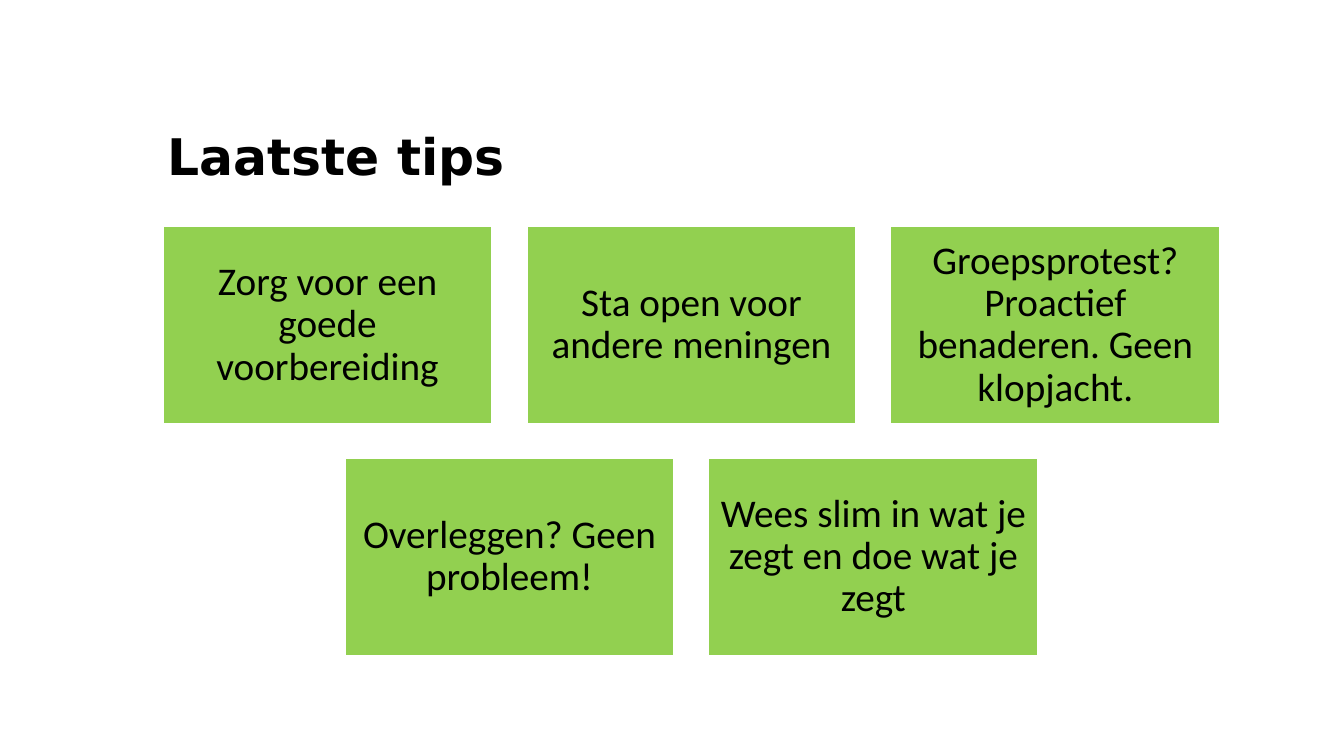
from pptx import Presentation
from pptx.dml.color import RGBColor
from pptx.enum.shapes import MSO_SHAPE as Shape
from pptx.enum.text import MSO_ANCHOR as Anchor, MSO_AUTO_SIZE as AutoSize, PP_ALIGN as Align
from pptx.util import Cm, Pt

GREEN, WHITE, BLACK = "92D050", "FFFFFF", "000000"

# Card grid, in centimetres
LEFT, TOP, WIDTH = 4.09, 5.69, 26.67
CARD_WIDTH, CARD_HEIGHT, GAP = 8.33, 5.0, 0.84

TIP_ROWS = [
    [
        "Zorg voor een goede voorbereiding",
        "Sta open voor andere meningen",
        "Groepsprotest? Proactief benaderen. Geen klopjacht.",
    ],
    [
        "Overleggen? Geen probleem!",
        "Wees slim in wat je zegt en doe wat je zegt",
    ],
]


def color(value):
    return RGBColor.from_string(value)


def write_text(box, text, font="Calibri", size=28, bold=False,
               align=Align.CENTER, inset=0.3):
    frame = box.text_frame
    frame.word_wrap = True
    frame.auto_size = AutoSize.NONE
    frame.vertical_anchor = Anchor.MIDDLE
    frame.margin_left = frame.margin_right = Cm(inset)
    frame.margin_top = frame.margin_bottom = Cm(inset)
    para = frame.paragraphs[0]
    para.alignment = align
    para.line_spacing = 0.9
    para.space_before = Pt(0)
    span = para.add_run()
    span.text = text
    span.font.name = font
    span.font.size = Pt(size)
    span.font.bold = bold
    span.font.color.rgb = color(BLACK)


def add_title(page, text):
    box = page.shapes.title
    box.left, box.top = Cm(LEFT), Cm(2.92)
    box.width, box.height = Cm(WIDTH), Cm(2.16)
    write_text(box, text, font="DejaVu Sans", size=36, bold=True,
               align=Align.LEFT, inset=0.13)


def add_card(page, left, top, text):
    box = page.shapes.add_shape(
        Shape.RECTANGLE, Cm(left), Cm(top), Cm(CARD_WIDTH), Cm(CARD_HEIGHT))
    box.shadow.inherit = False
    box.fill.solid()
    box.fill.fore_color.rgb = color(GREEN)
    box.line.color.rgb = color(WHITE)
    box.line.width = Pt(2)
    write_text(box, text)


def add_card_rows(page, rows):
    # Each row is centred under the title
    for row, tips in enumerate(rows):
        row_width = len(tips) * (CARD_WIDTH + GAP) - GAP
        start = LEFT + (WIDTH - row_width) / 2
        top = TOP + row * (CARD_HEIGHT + GAP)
        for column, tip in enumerate(tips):
            add_card(page, start + column * (CARD_WIDTH + GAP), top, tip)


def main():
    deck = Presentation()
    deck.slide_width, deck.slide_height = Cm(33.87), Cm(19.05)
    page = deck.slides.add_slide(deck.slide_layouts[5])  # Title only
    add_title(page, "Laatste tips")
    add_card_rows(page, TIP_ROWS)
    deck.save("out.pptx")


if __name__ == "__main__":
    main()
